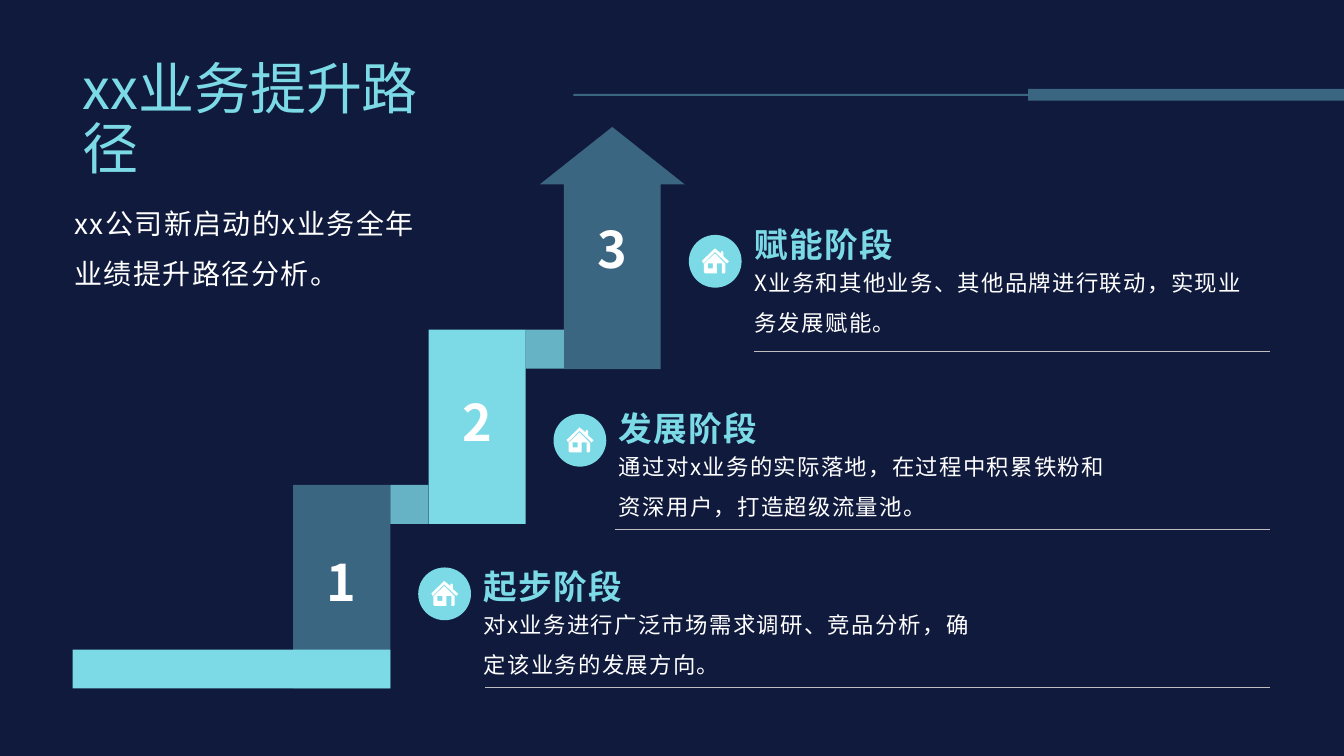
"""Build the business growth path slide: a three-step rising arrow with stage notes."""
import dataclasses

import pptx
import pptx.dml.color
import pptx.enum.shapes
import pptx.enum.text
import pptx.oxml
import pptx.oxml.ns
import pptx.util

TITLE = "xx业务提升路径"
INTRO = ["xx公司新启动的x业务全年", "业绩提升路径分析。"]
STAGES = [
    dict(head="起步阶段", note="对x业务进行广泛市场需求调研、竞品分析，确定该业务的发展方向。",
         top=13.74, icon=14.3, rule=(12.22, 17.32)),
    dict(head="发展阶段", note="通过对x业务的实际落地，在过程中积累铁粉和资深用户，打造超级流量池。",
         top=9.77, icon=10.43, rule=(15.49, 13.34)),
    dict(head="赋能阶段", note="X业务和其他业务、其他品牌进行联动，实现业务发展赋能。",
         top=5.13, icon=5.92, rule=(19, 8.84)),
]
ARROW = [[(61, 610), (61, 145), (0, 145), (183, 0), (366, 145), (305, 145), (305, 610)]]
HOUSE = [
    [(26, 0), (38, 10), (38, 7), (40, 5), (43, 7), (43, 16), (54, 26), (50, 30),
     (26, 7), (3, 30), (0, 25)],
    [(26, 10), (47, 31), (47, 48), (45, 50), (40, 50), (40, 30), (30, 30), (30, 50),
     (7, 50), (4, 48), (4, 31)],
    [(12, 30), (22, 30), (22, 40), (12, 40)],
]


@dataclasses.dataclass(frozen=True)
class Theme:
    """Colours, fonts and type sizes."""
    back: str = "101A3D"
    main: str = "7CDAE7"
    white: str = "FFFFFF"
    grey: str = "BFBFBF"
    face: str = "Noto Sans CJK JP"
    title: str = "Noto Sans CJK SC"
    huge: int = 40
    digit: int = 36
    head: int = 24
    intro: int = 20
    note: int = 16


look = Theme()
Cm = pptx.util.Cm
Pt = pptx.util.Pt
Kind = pptx.enum.shapes.MSO_SHAPE
Align = pptx.enum.text.PP_ALIGN
Anchor = pptx.enum.text.MSO_ANCHOR
LEFT, STEP, WIDE, JOIN = 7.39, 3.41, 2.45, 0.98
TOPS = [12.22, 8.31]
FOOT = 17.35
DISC = 1.33

deck = pptx.Presentation()
deck.slide_width, deck.slide_height = Cm(33.87), Cm(19.05)
slide = deck.slides.add_slide(deck.slide_layouts[5])
slide.background.fill.solid()
slide.background.fill.fore_color.rgb = pptx.dml.color.RGBColor.from_string(look.back)
shapes = slide.shapes


def paint(fill, tone, alpha=100):
    """Give a fill a solid colour with an opacity in percent."""
    fill.solid()
    fill.fore_color.rgb = pptx.dml.color.RGBColor.from_string(tone)
    if alpha < 100:
        tint = fill._xPr.find(".//" + pptx.oxml.ns.qn("a:srgbClr"))
        node = tint.makeelement(pptx.oxml.ns.qn("a:alpha"), {"val": str(alpha * 1000)})
        tint.append(node)


def write(frame, text, size, tone=look.white, face=look.face, bold=False, line=1.5,
          gap=0, align=Align.LEFT, anchor=Anchor.TOP, pad=(0, 0, 0, 0), wrap=True):
    """Write one or more paragraphs into a text frame."""
    frame.auto_size = pptx.enum.text.MSO_AUTO_SIZE.NONE
    frame.word_wrap = wrap
    frame.vertical_anchor = anchor
    (frame.margin_left, frame.margin_top,
     frame.margin_right, frame.margin_bottom) = map(Cm, pad)
    rows = [text] if isinstance(text, str) else text
    for i, row in enumerate(rows):
        para = frame.add_paragraph() if i else frame.paragraphs[0]
        para.alignment, para.line_spacing = align, line
        run = para.add_run()
        run.text = row
        font = run.font
        font.name, font.size, font.bold = face, Pt(size), bold
        paint(font.fill, tone)
        props = run._r.get_or_add_rPr()
        props.set("lang", "zh-CN")
        props.set("spc", str(gap * 100))
        east = props.makeelement(pptx.oxml.ns.qn("a:ea"), {"typeface": face})
        props.find(pptx.oxml.ns.qn("a:latin")).addnext(east)


def finish(item, tone, alpha=100):
    """Fill a shape and take away its line and shadow."""
    paint(item.fill, tone, alpha)
    item.line.fill.background()
    item.shadow.inherit = False
    return item


def block(x, y, w, h, alpha=100, kind=Kind.RECTANGLE):
    """Add a filled preset shape."""
    item = shapes.add_shape(kind, Cm(x), Cm(y), Cm(w), Cm(h))
    return finish(item, look.main, alpha)


def trace(rings, x, y, scale, tone, alpha=100):
    """Add an outline made of closed rings of points."""
    pen = shapes.build_freeform(*rings[0][0], scale=scale)
    for i, ring in enumerate(rings):
        if i:
            pen.move_to(*ring[0])
        pen.add_line_segments(ring[1:], close=True)
    return finish(pen.convert_to_shape(Cm(x), Cm(y)), tone, alpha)


def rule(x, y, end, tone, width, alpha=100):
    """Add a level line."""
    item = shapes.add_connector(pptx.enum.shapes.MSO_CONNECTOR.STRAIGHT,
                                Cm(x), Cm(y), Cm(end), Cm(y))
    paint(item.line.fill, tone, alpha)
    item.line.width = Pt(width)
    props = item._element.spPr
    props.append(props.makeelement(pptx.oxml.ns.qn("a:effectLst"), {}))


def label(x, y, w, h, text, size, **form):
    """Add a text box."""
    box = shapes.add_textbox(Cm(x), Cm(y), Cm(w), Cm(h))
    write(box.text_frame, text, size, gap=1, **form)


def number(item, text, line):
    """Put a step number in the middle of a shape."""
    write(item.text_frame, text, look.digit, bold=True, line=line,
          align=Align.CENTER, anchor=Anchor.MIDDLE)


def main():
    """Place every part and save the deck."""
    rule(14.45, 2.39, 25.91, look.main, 1.5, 40)
    block(25.91, 2.24, 7.96, 0.3, 40)
    block(1.83, FOOT - JOIN, LEFT + WIDE - 1.83, JOIN)

    feet = [FOOT, TOPS[0] + JOIN]
    for i, (top, foot, alpha) in enumerate(zip(TOPS, feet, (40, 100))):
        x = LEFT + i * STEP
        block(x + WIDE, top, STEP - WIDE, JOIN, 80)
        number(block(x, top, WIDE, foot - top, alpha), str(i + 1), 0.8)
    arrow = trace(ARROW, LEFT + 2 * STEP - 0.61, 3.2, Cm(0.01), look.main, 40)
    number(arrow, "3", 1)

    for i, stage in enumerate(STAGES):
        x = LEFT + i * STEP
        disc, text, top = x + WIDE + 0.7, x + 4.8, stage["top"]
        block(disc, stage["icon"], DISC, DISC, kind=Kind.OVAL)
        trace(HOUSE, disc + 0.33, stage["icon"] + 0.34, Cm(0.68) / 54, look.white)
        rule(*stage["rule"], 32, look.grey, 0.25)
        label(text, top + 1.31, 12.7, 2.26, stage["note"], look.note)
        label(text, top, 3.51, 1.4, stage["head"], look.head,
              tone=look.main, bold=True, wrap=False)

    label(1.88, 4.65, 10.34, 2.69, INTRO, look.intro, pad=(0, 0.13, 0.25, 0.13))
    title = shapes.title
    title.left, title.top, title.width, title.height = map(Cm, (1.83, 1.4, 10.29, 2.01))
    write(title.text_frame, TITLE, look.huge, tone=look.main, face=look.title,
          line=0.9, pad=(0.25, 0.13, 0.25, 0.13))
    deck.save("out.pptx")


if __name__ == "__main__":
    main()
